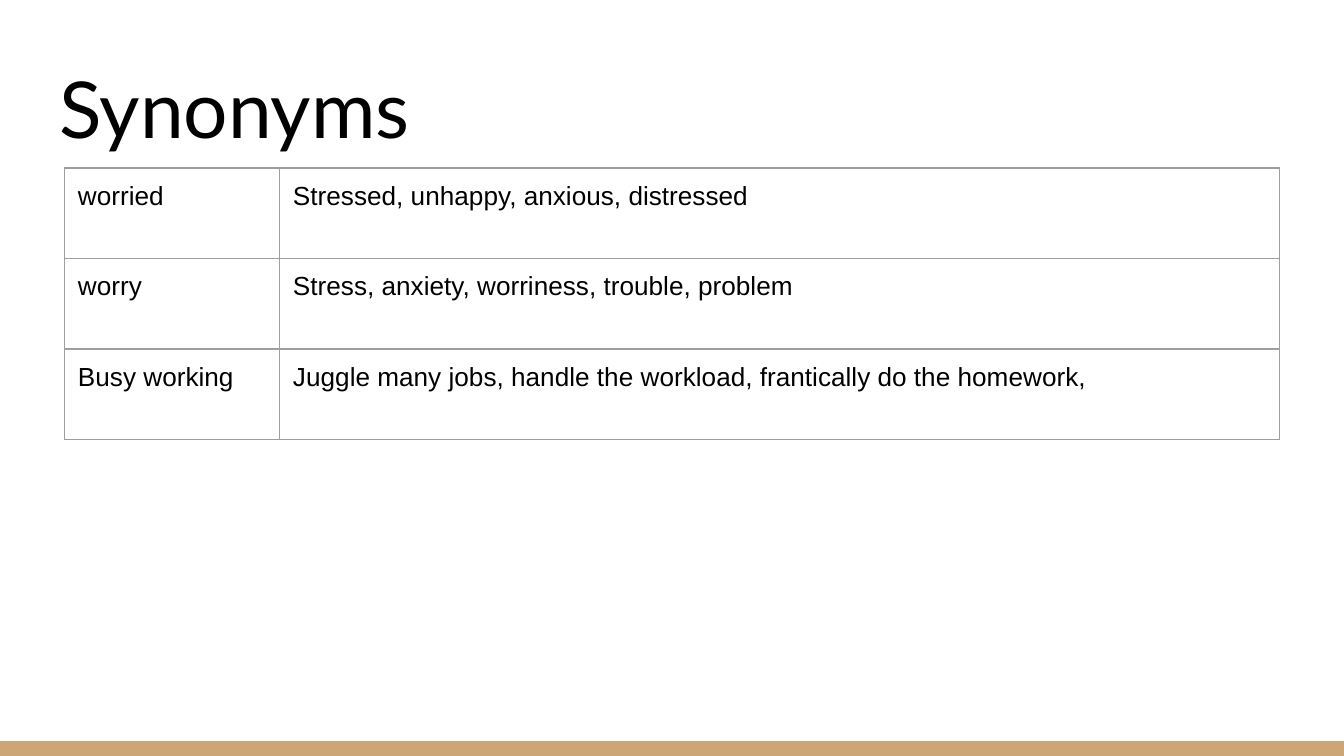
"""Build a vocabulary slide with a table of synonyms."""
from lxml.etree import SubElement
from pptx import Presentation
from pptx.dml.color import RGBColor
from pptx.enum.shapes import MSO_SHAPE as Shape
from pptx.enum.text import MSO_ANCHOR as Anchor, PP_ALIGN as Align
from pptx.oxml.ns import qn
from pptx.util import Inches, Pt

WIDTH = 10
HEIGHT = WIDTH * 9 / 16
BAR_HEIGHT = 0.11
INSET = Inches(0.1)
COLUMNS = (1.6, 7.44)
TABLE_HEIGHT = 2.02
BLACK = RGBColor(0x00, 0x00, 0x00)
TAN = RGBColor(0xCC, 0xA6, 0x77)
GREY = RGBColor(0x9E, 0x9E, 0x9E)
SYNONYMS = (
    ("worried", "Stressed, unhappy, anxious, distressed"),
    ("worry", "Stress, anxiety, worriness, trouble, problem"),
    ("Busy working", "Juggle many jobs, handle the workload, frantically do the homework,"),
)


def format_text(holder, name, size):
    """Set the insets and font of a text frame or table cell."""
    holder.margin_left = holder.margin_right = INSET
    holder.margin_top = holder.margin_bottom = INSET
    frame = getattr(holder, "text_frame", holder)
    for para in frame.paragraphs:
        para.alignment = Align.LEFT
        for span in para.runs:
            span.font.name = name
            span.font.size = Pt(size)
            span.font.color.rgb = BLACK


def add_bar(page):
    """Draw the coloured bar along the bottom edge."""
    bar = page.shapes.add_shape(
        Shape.RECTANGLE, 0, Inches(HEIGHT - BAR_HEIGHT), Inches(WIDTH), Inches(BAR_HEIGHT))
    bar.shadow.inherit = False
    bar.fill.solid()
    bar.fill.fore_color.rgb = TAN
    bar.line.fill.background()


def set_title(page, text):
    """Place and format the title placeholder."""
    title = page.shapes.title
    title.left, title.top = Inches(0.34), Inches(0.34)
    title.width, title.height = Inches(9.32), Inches(0.91)
    frame = title.text_frame
    frame.text = text
    frame.vertical_anchor = Anchor.BOTTOM
    format_text(frame, "Lato", 42)


def set_borders(cell):
    """Give a cell a thin grey line on every side."""
    properties = cell._tc.get_or_add_tcPr()
    for position, side in enumerate(("lnL", "lnR", "lnT", "lnB")):
        line = SubElement(properties, qn(f"a:{side}"), w=str(Pt(0.75)))
        properties.insert(position, line)
        fill = SubElement(line, qn("a:solidFill"))
        SubElement(fill, qn("a:srgbClr"), val=str(GREY))


def add_synonym_table(page):
    """Add the table of words and their synonyms."""
    table = page.shapes.add_table(
        len(SYNONYMS), len(COLUMNS), Inches(0.48), Inches(1.25),
        Inches(sum(COLUMNS)), Inches(TABLE_HEIGHT)).table
    table.first_row = table.horz_banding = False
    for column, width in zip(table.columns, COLUMNS):
        column.width = Inches(width)
    for row, texts in zip(table.rows, SYNONYMS):
        for cell, text in zip(row.cells, texts):
            cell.text = text
            cell.fill.background()
            format_text(cell, "Arial", 14)
            set_borders(cell)


def main():
    """Build and save the deck."""
    deck = Presentation()
    deck.slide_width, deck.slide_height = Inches(WIDTH), Inches(HEIGHT)
    page = deck.slides.add_slide(deck.slide_layouts[5])
    add_bar(page)
    set_title(page, "Synonyms")
    add_synonym_table(page)
    deck.save("out.pptx")


if __name__ == "__main__":
    main()
